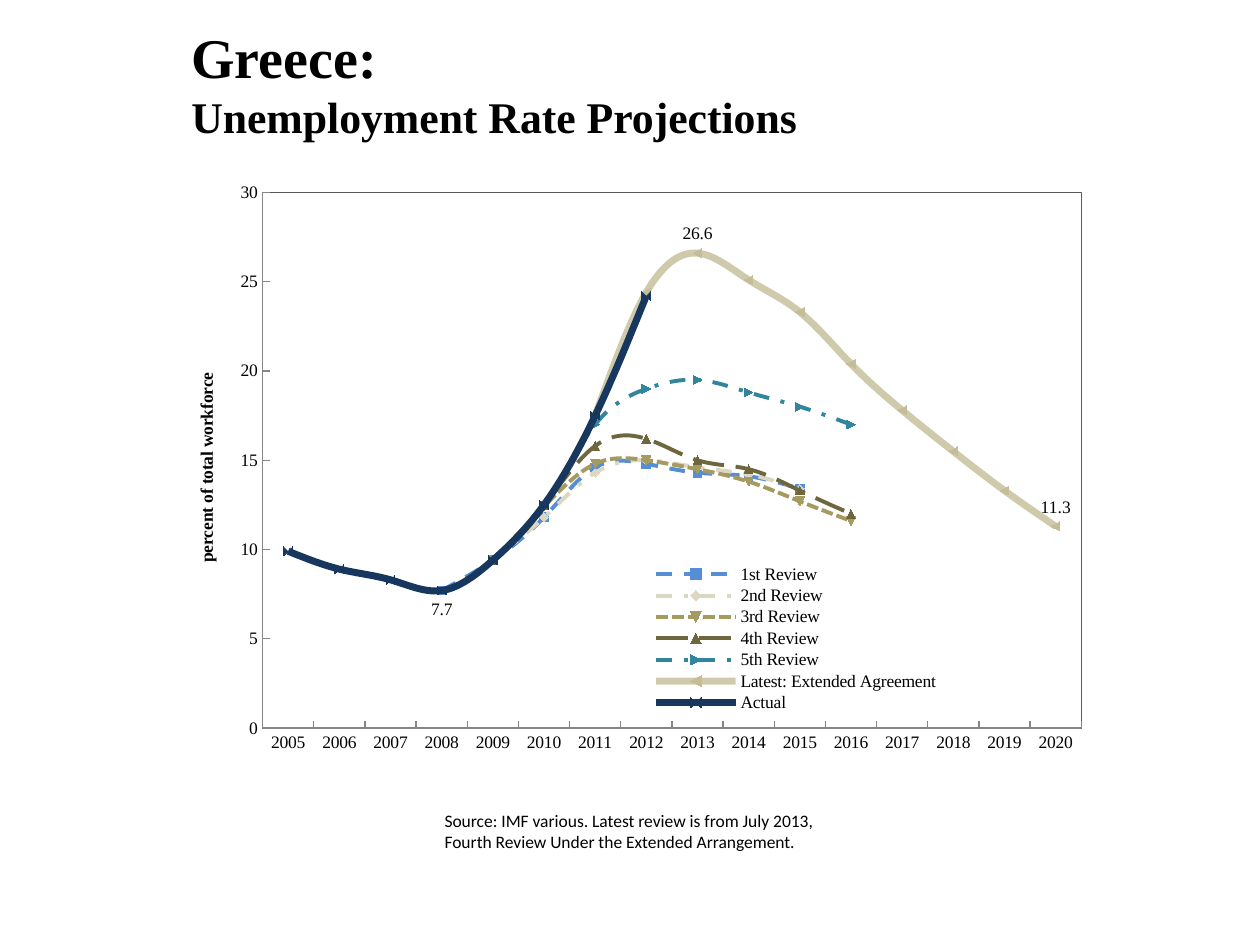
from lxml import etree
from pptx import Presentation
from pptx.chart.data import CategoryChartData
from pptx.dml.color import RGBColor
from pptx.enum.chart import XL_CHART_TYPE, XL_LABEL_POSITION, XL_LEGEND_POSITION, XL_TICK_MARK
from pptx.enum.dml import MSO_LINE
from pptx.oxml import parse_xml
from pptx.oxml.ns import nsdecls, qn
from pptx.util import Inches, Pt

LINE = XL_CHART_TYPE.LINE
ABOVE, BELOW = XL_LABEL_POSITION.ABOVE, XL_LABEL_POSITION.BELOW
LEGEND_RIGHT = XL_LEGEND_POSITION.RIGHT
TICK_INSIDE, TICK_NONE = XL_TICK_MARK.INSIDE, XL_TICK_MARK.NONE
DASH, DASH_DOT = MSO_LINE.DASH, MSO_LINE.DASH_DOT
SHORT_DASH, LONG_DASH, SOLID = MSO_LINE.SQUARE_DOT, MSO_LINE.LONG_DASH, MSO_LINE.SOLID

SERIF, SANS = "Times New Roman", "Calibri"
COLORS = {
    "text": "000000", "axis": "868686", "frame": "595959",
    "first": "558ED5", "second": "DCD7C1", "third": "A59A60", "fourth": "6E673E",
    "fifth": "31859C", "latest": "C4BD97", "actual": "17375E",
}
YEARS = range(2005, 2021)
PROJECTIONS = [
    ("1st Review", 2008, [7.7, 9.4, 11.8, 14.6, 14.8, 14.3, 14.1, 13.4],
     "first", 2.25, DASH, {}),
    ("2nd Review", 2009, [9.4, 11.8, 14.3, 15, 14.6, 14.2, 13.4],
     "second", 2.25, DASH_DOT, {}),
    ("3rd Review", 2009, [9.4, 12.4, 14.8, 15, 14.5, 13.8, 12.7, 11.6],
     "third", 2.25, SHORT_DASH, {}),
    ("4th Review", 2009, [9.4, 12.5, 15.8, 16.2, 15, 14.5, 13.3, 12],
     "fourth", 2.25, LONG_DASH, {}),
    ("5th Review", 2009, [9.4, 12.5, 17, 19, 19.5, 18.8, 18, 17],
     "fifth", 2.25, DASH_DOT, {}),
    ("Latest: Extended Agreement", 2011,
     [17.5, 24.4, 26.6, 25.1, 23.3, 20.4, 17.8, 15.5, 13.3, 11.3],
     "latest", 4, SOLID, {2013: ABOVE, 2020: ABOVE}),
    ("Actual", 2005, [9.9, 8.9, 8.3, 7.7, 9.4, 12.5, 17.5, 24.2],
     "actual", 4, SOLID, {2008: BELOW}),
]


def color(name):
    return RGBColor.from_string(COLORS[name])


def style_font(font, size=10, face=SERIF, bold=False):
    font.size = Pt(size)
    font.name = face
    font.bold = bold
    font.color.rgb = color("text")


def add_text(slide, box, lines, sizes, **style):
    frame = slide.shapes.add_textbox(*map(Inches, box)).text_frame
    frame.word_wrap = False
    for index, (line, size) in enumerate(zip(lines, sizes)):
        paragraph = frame.add_paragraph() if index else frame.paragraphs[0]
        run = paragraph.add_run()
        run.text = line
        style_font(run.font, size, **style)


def set_layout(element, position, box, target=""):
    for previous in element.findall(qn("c:layout")):
        element.remove(previous)
    places = "".join(f'<c:{tag} val="{value}"/>' for tag, value in zip("xywh", box))
    element.insert(position, parse_xml(
        f'<c:layout {nsdecls("c")}><c:manualLayout>{target}'
        f'<c:xMode val="edge"/><c:yMode val="edge"/>{places}'
        '</c:manualLayout></c:layout>'))


def style_axis(axis):
    axis.has_major_gridlines = False
    axis.major_tick_mark = TICK_INSIDE
    axis.minor_tick_mark = TICK_NONE
    axis.format.line.color.rgb = color("axis")
    axis.format.line.width = Pt(0.75)
    style_font(axis.tick_labels.font)


def style_projection(series, hue, width, dash, labels):
    series.smooth = True
    line = series.format.line
    line.color.rgb = color(hue)
    line.width = Pt(width)
    line.dash_style = dash
    series.marker.style = None
    if hue == "latest":
        fill = line.fill.fore_color
        fill.rgb = color(hue)
        tone = next(series.format.line._ln.iter(qn("a:srgbClr")))
        etree.SubElement(tone, qn("a:alpha")).set("val", "80000")
    if labels:
        series.data_labels.show_value = False
    for year, position in labels.items():
        label = series.points[YEARS.index(year)].data_label
        style_font(label.font)
        label.position = position


def add_projections(slide, box):
    data = CategoryChartData(number_format="0.0")
    data.categories = [str(year) for year in YEARS]
    for name, start, values, *_ in PROJECTIONS:
        before = [None] * YEARS.index(start)
        after = [None] * (len(YEARS) - len(before) - len(values))
        data.add_series(name, before + values + after)
    chart = slide.shapes.add_chart(LINE, *map(Inches, box), data).chart
    style_font(chart.font)
    chart.has_title = False
    plot = chart.plots[0]
    plot.vary_by_categories = False
    for series, (_, _, _, *look) in zip(plot.series, PROJECTIONS):
        style_projection(series, *look)

    style_axis(chart.category_axis)
    rate = chart.value_axis
    style_axis(rate)
    rate.minimum_scale, rate.maximum_scale, rate.major_unit = 0, 30, 5
    rate.tick_labels.number_format = "0"
    rate.tick_labels.number_format_is_linked = False
    caption = rate.axis_title.text_frame.paragraphs[0].add_run()
    caption.text = "percent of total workforce"
    style_font(caption.font, bold=True)

    chart.has_legend = True
    legend = chart.legend
    legend.position = LEGEND_RIGHT
    legend.include_in_layout = True
    style_font(legend.font)
    set_layout(legend._element, 1, (0.52, 0.65, 0.32, 0.25))

    area = plot._element.getparent()
    set_layout(area, 0, (0.104, 0.039, 0.884, 0.884), '<c:layoutTarget val="inner"/>')
    area.append(parse_xml(
        f'<c:spPr {nsdecls("c", "a")}><a:noFill/><a:ln w="{Pt(0.75)}"><a:solidFill>'
        f'<a:srgbClr val="{COLORS["frame"]}"/></a:solidFill></a:ln></c:spPr>'))


def main():
    deck = Presentation()
    deck.slide_width, deck.slide_height = Inches(10), Inches(7.5)
    slide = deck.slides.add_slide(deck.slide_layouts[6])
    add_text(slide, (1.42, 0.13, 5.06, 1.06),
             ["Greece:", "Unemployment Rate Projections"], (32, 25), bold=True)
    add_text(slide, (3.43, 6.38, 3.21, 0.44),
             ["Source: IMF various. Latest review is from July 2013,",
              "Fourth Review Under the Extended Arrangement."], (10, 10), face=SANS)
    add_projections(slide, (1.32, 1.34, 7.35, 4.81))
    deck.save("out.pptx")


if __name__ == "__main__":
    main()
